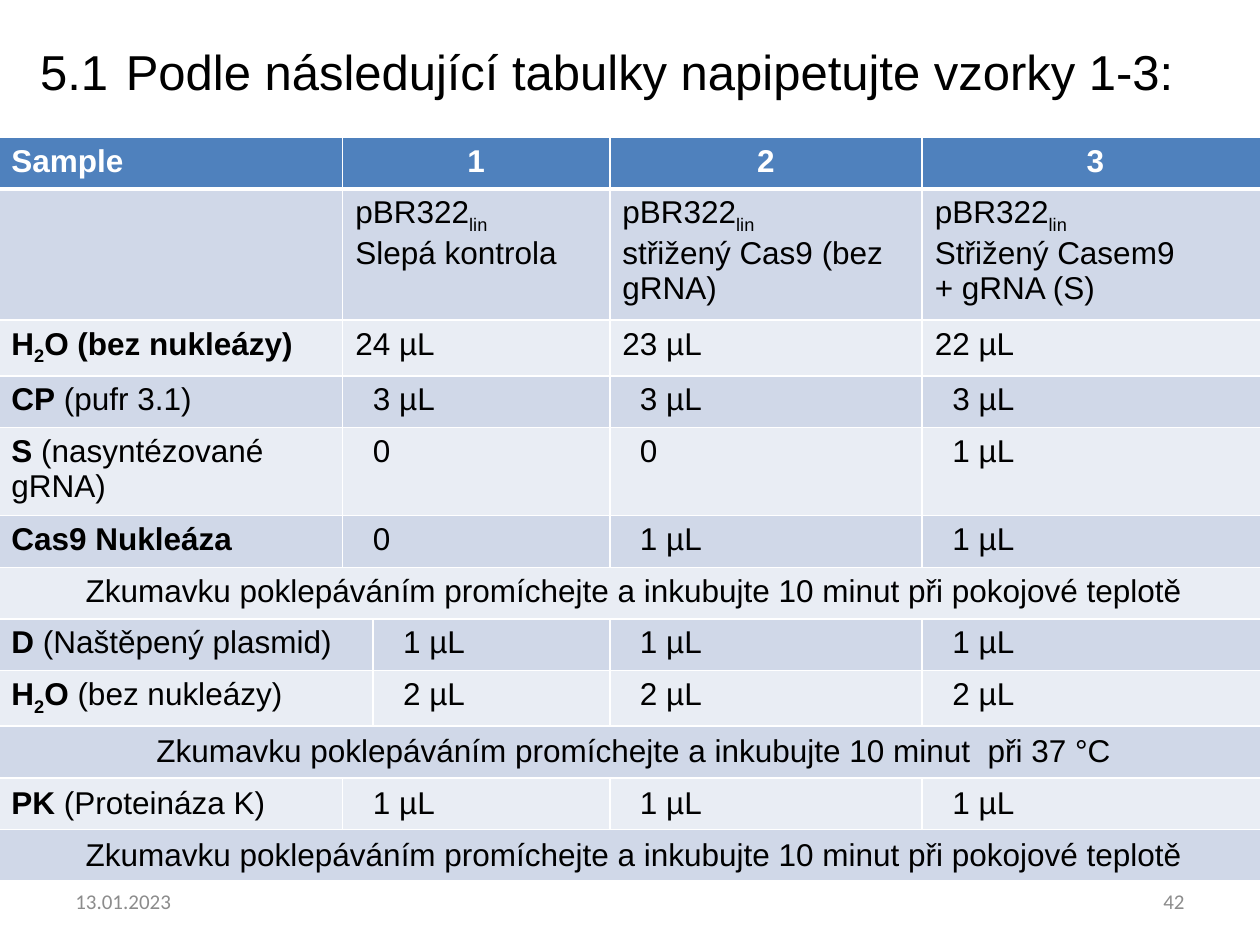
import pptx
import pptx.dml.color
import pptx.enum.text
import pptx.oxml.ns
import pptx.util
import lxml.etree

Inches = pptx.util.Inches
Pt = pptx.util.Pt
ALIGN = pptx.enum.text.PP_ALIGN
ANCHOR = pptx.enum.text.MSO_ANCHOR
COLORS = {"black": "000000", "white": "FFFFFF", "gray": "8C8C8C",
          "head": "4F81BD", "dark": "D0D8E8", "light": "E9EDF4"}


def rgb(name):
    return pptx.dml.color.RGBColor.from_string(COLORS[name])


def write(para, parts, color, **fmt):
    """Add (text, marks) parts: b is bold, s is subscript."""
    for text, marks in parts:
        for i, line in enumerate(text.split("\n")):
            if i:
                para.add_line_break()
            if not line:
                continue
            run = para.add_run()
            run.text = line
            for key, value in {**fmt, "bold": "b" in marks}.items():
                setattr(run.font, key, value)
            run.font.color.rgb = rgb(color)
            if "s" in marks:
                run.font._element.set("baseline", "-25000")


prs = pptx.Presentation()
prs.slide_width, prs.slide_height = Inches(10), Inches(7.5)
slide = prs.slides.add_slide(prs.slide_layouts[6])

# Title, date and page number
small = {"name": "Calibri", "size": Pt(12), "color": "gray"}
big = {"name": "Arial", "size": Pt(28), "color": "black"}
texts = [
    ("5.1 \tPodle následující tabulky napipetujte vzorky 1-3:",
     (0.22, 0.28, 9.31, 0.57), ALIGN.LEFT, big),
    ("13.01.2023", (0.5, 6.95, 2.33, 0.4), ALIGN.LEFT, small),
    ("42", (7.17, 6.95, 2.33, 0.4), ALIGN.RIGHT, small),
]
for text, place, align, fmt in texts:
    frame = slide.shapes.add_textbox(*map(Inches, place)).text_frame
    frame.word_wrap = True
    frame.vertical_anchor = ANCHOR.MIDDLE
    para = frame.paragraphs[0]
    para.alignment = align
    write(para, [(text, "")], **fmt)
    if "\t" in text:  # hanging indent after the number
        props = para._p.get_or_add_pPr()
        props.set("marL", str(Inches(0.68)))
        props.set("indent", str(Inches(-0.68)))

# Table content: label parts, then one value per sample
mix = "Zkumavku poklepáváním promíchejte a inkubujte 10 minut "
room = [(mix + "při pokojové teplotě", "")]
warm = [(mix + " při 37 °C", "")]
water = [("H", "b"), ("2", "bs")]
kinds = ["Slepá kontrola", "střižený Cas9 (bez gRNA)",
         "Střižený Casem9 \n+ gRNA (S)"]
rows = [
    ([("Sample", "b")], ["1", "2", "3"]),
    ([], kinds),
    (water + [("O (bez nukleázy)", "b")], ["24 µL", "23 µL", "22 µL"]),
    ([("CP", "b"), (" (pufr 3.1)", "")], ["3 µL"] * 3),
    ([("S ", "b"), ("(nasyntézované gRNA)", "")], ["0", "0", "1 µL"]),
    ([("Cas9 Nukleáza", "b")], ["0", "1 µL", "1 µL"]),
    (room, []),
    ([("D ", "b"), ("(Naštěpený plasmid)", "")], ["1 µL"] * 3),
    (water + [("O", "b"), (" (bez nukleázy)", "")], ["2 µL"] * 3),
    (warm, []),
    ([("PK", "b"), (" (Proteináza K)", "")], ["1 µL"] * 3),
    (room, []),
]
wide = (7, 8)  # rows whose label also covers the narrow column
widths = [2.73, 0.17, 1.88, 2.48, 2.75]

# Table grid
table = slide.shapes.add_table(
    len(rows), len(widths), Inches(-0.01), Inches(1.09),
    Inches(sum(widths)), Inches(0.41 * len(rows))).table
for col, width in zip(table.columns, widths):
    col.width = Inches(width)
for row in table.rows:
    row.height = Inches(0.41)

# White borders, thicker below the header, and banded fills
qn = pptx.oxml.ns.qn
for r in range(len(rows)):
    for c in range(len(widths)):
        cell = table.cell(r, c)
        props = cell._tc.get_or_add_tcPr()
        for side in "LRTB":
            thick = (r, side) in [(0, "B"), (1, "T")]
            line = lxml.etree.SubElement(
                props, qn("a:ln" + side), w=str(Pt(3 if thick else 1)))
            fill = lxml.etree.SubElement(line, qn("a:solidFill"))
            lxml.etree.SubElement(fill, qn("a:srgbClr"), val=COLORS["white"])
        cell.fill.solid()
        band = "head" if r == 0 else "dark" if r % 2 else "light"
        cell.fill.fore_color.rgb = rgb(band)

# Merges and text
for r, (label, values) in enumerate(rows):
    if not values:
        spots = [(0, 4, label)]
    else:
        split = 1 if r in wide else 0
        spots = [(0, split, label)]
        for i, value in enumerate(values):
            parts = [(value, "b" if r == 0 else "")]
            if r == 1:
                parts = [("pBR322", ""), ("lin", "s"), ("\n" + value, "")]
            first = split + 1 if i == 0 else i + 2
            spots.append((first, i + 2, parts))
    for first, last, parts in spots:
        cell = table.cell(r, first)
        if last > first:
            cell.merge(table.cell(r, last))
        if r >= 9:
            cell.vertical_anchor = ANCHOR.MIDDLE
        if first and r > 2:
            cell.margin_left = Inches(0.24)
        para = cell.text_frame.paragraphs[0]
        if not values or (r == 0 and first):
            para.alignment = ALIGN.CENTER
        write(para, parts, "black" if r else "white",
              name="Arial", size=Pt(18))

prs.save("out.pptx")
